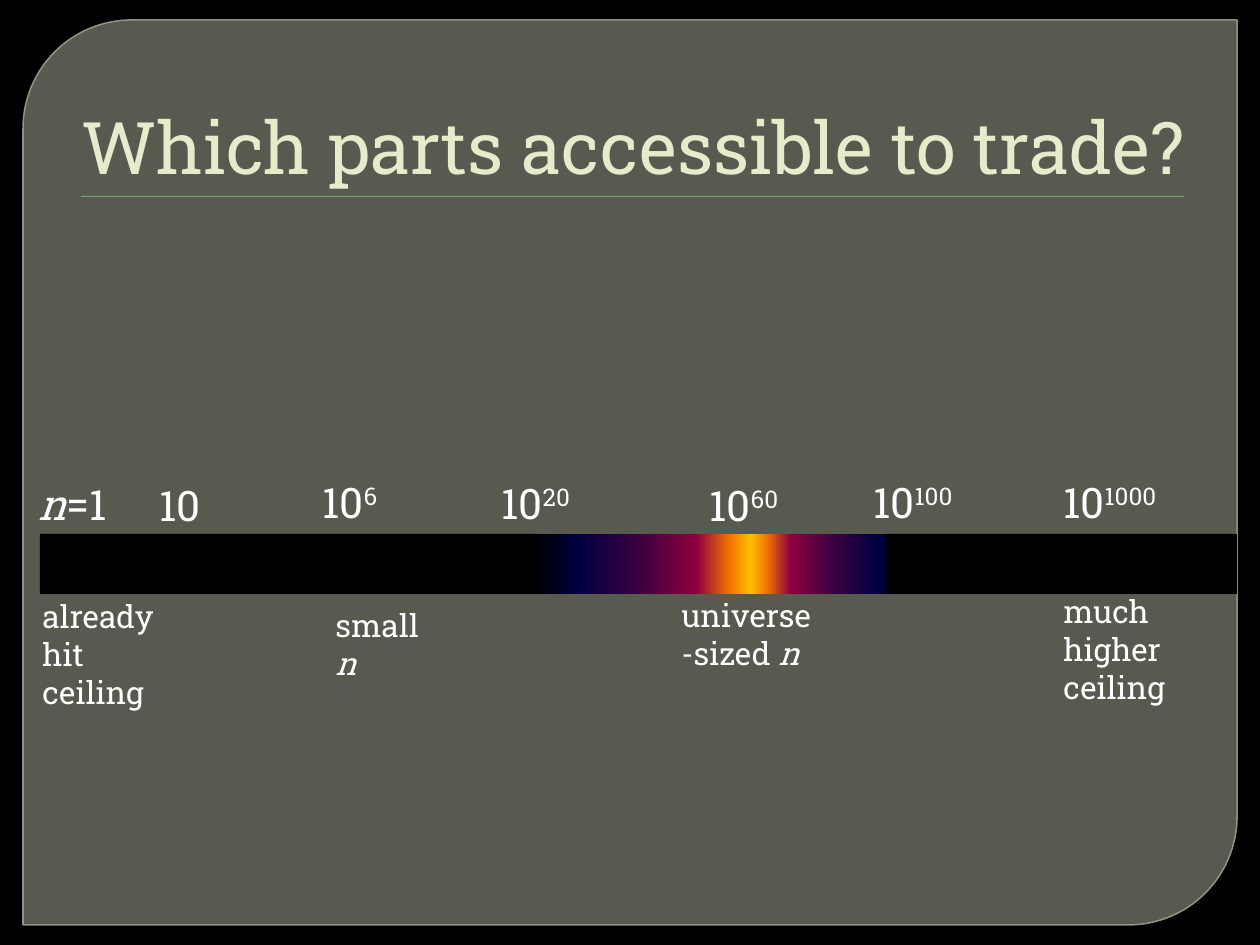
from dataclasses import dataclass

from lxml.etree import SubElement
from pptx import Presentation
from pptx.dml.color import RGBColor
from pptx.enum.shapes import MSO_SHAPE as SHAPE
from pptx.enum.text import MSO_ANCHOR as ANCHOR, MSO_AUTO_SIZE as AUTO_SIZE, PP_ALIGN as ALIGN
from pptx.oxml import parse_xml
from pptx.oxml.ns import nsdecls, qn
from pptx.util import Emu, Pt

PX = 914400 / 126


@dataclass(frozen=True)
class Theme:
    font: str = "Roboto Slab"
    black: str = "000000"
    panel: str = "888B7B"
    panel_line: str = "9DA090"
    rule: str = "72A376"
    title: str = "E7EACB"
    text: str = "FFFFFF"
    glow: tuple = ((0, "000000"), (20, "000040"), (50, "400040"),
                   (75, "8F0040"), (90, "F27300"), (100, "FFBF00"))
    title_size: float = 41.4
    scale_size: int = 24
    note_size: int = 18


THEME = Theme()
BAR_TOP, BAR_HEIGHT = 534, 60

# left, top, width, base, exponent
POWERS = [
    (147, 473, 83, "10", ""),
    (310, 470, 122, "10", "6"),
    (489, 471, 122, "10", "20"),
    (697, 473, 122, "10", "60"),
    (861, 470, 122, "10", "100"),
    (1051, 470, 146, "10", "1000"),
]

# left, top, width, height, plain text, italic text
NOTES = [
    (30, 591, 175, 89, "already hit ceiling", ""),
    (323, 600, 130, 50, "small ", "n"),
    (669, 590, 161, 89, "universe-sized ", "n"),
    (1051, 586, 130, 127, "much higher ceiling", ""),
]


def px(*lengths):
    return [Emu(round(n * PX)) for n in lengths]


def rgb(color):
    return RGBColor.from_string(color)


def set_alpha(fill_format, percent):
    """Make a solid fill partly transparent."""
    color = fill_format._xPr.find(qn("a:solidFill"))[0]
    SubElement(color, qn("a:alpha"), val=str(percent * 1000))


def add_box(slide, box, color=None, kind=SHAPE.RECTANGLE):
    sp = slide.shapes.add_shape(kind, *px(*box))
    sp.shadow.inherit = False
    sp.line.fill.background()
    if color:
        sp.fill.solid()
        sp.fill.fore_color.rgb = rgb(color)
    return sp


def add_gradient_box(slide, box, stops):
    sp = add_box(slide, box)
    stop_xml = "".join(
        f'<a:gs pos="{pos * 1000}"><a:srgbClr val="{color}"/></a:gs>' for pos, color in stops)
    gradient = parse_xml(
        f'<a:gradFill {nsdecls("a")} rotWithShape="1"><a:gsLst>{stop_xml}</a:gsLst>'
        '<a:lin ang="0" scaled="1"/></a:gradFill>')
    sp._element.spPr.find(qn("a:prstGeom")).addnext(gradient)


def add_text(slide, box, runs, size, color=THEME.text):
    """Add one paragraph of (text, style) runs; style is "", "italic" or "super"."""
    tf = slide.shapes.add_textbox(*px(*box)).text_frame
    tf.word_wrap = True
    tf.auto_size = AUTO_SIZE.NONE
    p = tf.paragraphs[0]
    p.font.name, p.font.size = THEME.font, Pt(size)
    p.font.color.rgb = rgb(color)
    for text, style in runs:
        if not text:
            continue
        r = p.add_run()
        r.text = text
        r.font.name, r.font.size = THEME.font, Pt(size)
        r.font.color.rgb = rgb(color)
        if style == "italic":
            r.font.italic = True
        elif style == "super":
            r.font._element.set("baseline", "30000")
    return tf


def add_frame(slide):
    slide.background.fill.solid()
    slide.background.fill.fore_color.rgb = rgb(THEME.black)
    panel = add_box(slide, (23, 20, 1214, 905), THEME.panel, SHAPE.ROUND_2_DIAG_RECTANGLE)
    panel.adjustments[0], panel.adjustments[1] = 0.12, 0
    set_alpha(panel.fill, 65)
    panel.line.color.rgb = rgb(THEME.panel_line)
    panel.line.width = Pt(0.87)
    set_alpha(panel.line.fill, 88)
    add_box(slide, (81, 196, 1103, 1), THEME.rule)


def add_title(slide, text):
    tf = add_text(slide, (63, 35, 1134, 158), [(text, "")], THEME.title_size, THEME.title)
    tf.vertical_anchor = ANCHOR.BOTTOM
    tf.margin_bottom = px(3)[0]
    p = tf.paragraphs[0]
    p.alignment = ALIGN.RIGHT
    p.line_spacing = 0.9


def add_spectrum(slide):
    rising = THEME.glow
    falling = [(100 - pos, color) for pos, color in reversed(rising)]
    for left, width, stops in ((535, 216, rising), (751, 158, falling)):
        add_gradient_box(slide, (left, BAR_TOP, width, BAR_HEIGHT), stops)
    for left, width in ((40, 495), (887, 350)):
        add_box(slide, (left, BAR_TOP, width, BAR_HEIGHT), THEME.black)


def main():
    prs = Presentation()
    prs.slide_width, prs.slide_height = px(1260, 945)
    slide = prs.slides.add_slide(prs.slide_layouts[6])
    add_frame(slide)
    add_spectrum(slide)
    add_text(slide, (26, 472, 103, 63), [("n", "italic"), ("=1", "")], THEME.scale_size)
    for left, top, width, base, exponent in POWERS:
        add_text(slide, (left, top, width, 63), [(base, ""), (exponent, "super")],
                 THEME.scale_size)
    for *box, plain, italic in NOTES:
        add_text(slide, box, [(plain, ""), (italic, "italic")], THEME.note_size)
    add_title(slide, "Which parts accessible to trade?")
    prs.save("out.pptx")


if __name__ == "__main__":
    main()
